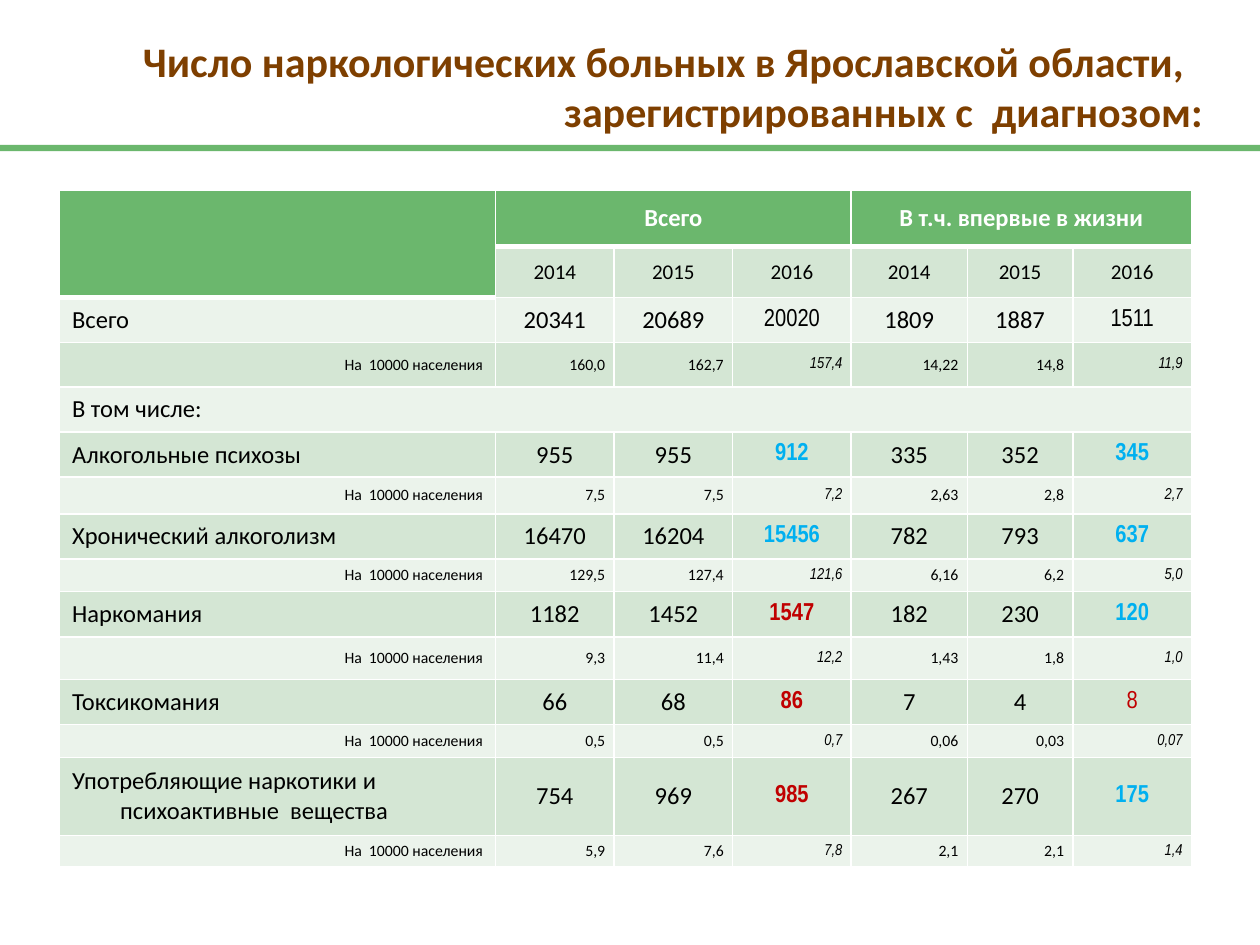
"""Build a slide with a table of registered patients by diagnosis and year."""
from dataclasses import dataclass

from lxml.etree import SubElement
from pptx import Presentation
from pptx.dml.color import RGBColor
from pptx.enum.shapes import MSO_SHAPE as Shape
from pptx.enum.text import MSO_ANCHOR as Anchor, PP_ALIGN as Align
from pptx.oxml.ns import qn
from pptx.util import Cm, Pt

GREEN = RGBColor(0x6B, 0xB7, 0x6D)
BAND_DARK = RGBColor(0xD4, 0xE6, 0xD4)
BAND_LIGHT = RGBColor(0xEB, 0xF3, 0xEB)
BROWN = RGBColor(0x7E, 0x3F, 0x00)
BLUE = RGBColor(0x00, 0xB0, 0xF0)
RED = RGBColor(0xC0, 0x00, 0x00)
BLACK = RGBColor(0, 0, 0)
WHITE = RGBColor(0xFF, 0xFF, 0xFF)

BODY_FONT = "Calibri"
LATEST_FONT = "Arial Narrow"
LATEST_COLS = (3, 6)
HANGING = Cm(0.97)
RATE_LABEL = "На  10000 населения"
COL_WIDTHS = (8.79, 2.39, 2.39, 2.39, 2.34, 2.13, 2.39)
ROW_HEIGHTS = (1.14, 0.91, 0.91, 0.89, 0.91, 0.91, 0.74, 0.91,
               0.66, 0.91, 0.86, 0.91, 0.66, 1.57, 0.41)


@dataclass
class Diagnosis:
    name: str
    counts: str
    rates: str
    total_color: RGBColor = BLUE
    new_color: RGBColor = BLUE
    total_bold: bool = True
    new_bold: bool = True


OVERALL = Diagnosis("Всего", "20341 20689 20020 1809 1887 1511",
                    "160,0 162,7 157,4 14,22 14,8 11,9", BLACK, BLACK, False, False)
DIAGNOSES = (
    Diagnosis("Алкогольные психозы", "955 955 912 335 352 345",
              "7,5 7,5 7,2 2,63 2,8 2,7"),
    Diagnosis("Хронический алкоголизм", "16470 16204 15456 782 793 637",
              "129,5 127,4 121,6 6,16 6,2 5,0"),
    Diagnosis("Наркомания", "1182 1452 1547 182 230 120",
              "9,3 11,4 12,2 1,43 1,8 1,0", RED),
    Diagnosis("Токсикомания", "66 68 86 7 4 8",
              "0,5 0,5 0,7 0,06 0,03 0,07", RED, RED, new_bold=False),
    Diagnosis("Употребляющие наркотики и психоактивные  вещества",
              "754 969 985 267 270 175", "5,9 7,6 7,8 2,1 2,1 1,4", RED),
)


def write(tf, text: str, *, size: float, align=Align.LEFT, font: str = BODY_FONT,
          color: RGBColor = BLACK, bold: bool = False, italic: bool = False,
          hanging: bool = False) -> None:
    p = tf.paragraphs[0]
    p.alignment = align
    if hanging:
        pPr = p._p.get_or_add_pPr()
        pPr.set("marL", str(HANGING))
        pPr.set("indent", str(-HANGING))
    for i, line in enumerate(text.split("\n")):
        if i:
            p.add_line_break()
        r = p.add_run()
        r.text = line
        r.font.name = font
        r.font.size = Pt(size)
        r.font.bold = bold
        r.font.italic = italic
        r.font.color.rgb = color


def style_cell(cell, fill: RGBColor, bottom: float) -> None:
    tcPr = cell._tc.get_or_add_tcPr()
    for side, width in (("L", 1), ("R", 1), ("T", 1), ("B", bottom)):
        ln = SubElement(tcPr, qn(f"a:ln{side}"), w=str(Pt(width)))
        solid = SubElement(ln, qn("a:solidFill"))
        SubElement(solid, qn("a:srgbClr"), val=str(WHITE))
    cell.fill.solid()
    cell.fill.fore_color.rgb = fill
    cell.vertical_anchor = Anchor.MIDDLE


def tighten(cell) -> None:
    cell.margin_left = cell.margin_right = Cm(0.18)
    cell.margin_top = cell.margin_bottom = 0


def fill_header(tbl) -> None:
    tbl.cell(0, 0).merge(tbl.cell(1, 0))
    for col, text in ((1, "Всего"), (4, "В т.ч. впервые в жизни")):
        tbl.cell(0, col).merge(tbl.cell(0, col + 2))
        write(tbl.cell(0, col).text_frame, text, size=14, align=Align.CENTER,
              color=WHITE, bold=True, hanging=True)
        for i in range(3):
            cell = tbl.cell(1, col + i)
            if col == 1:
                tighten(cell)
            write(cell.text_frame, str(2014 + i), size=12, align=Align.CENTER,
                  hanging=col == 4)


def fill_diagnosis(tbl, row: int, d: Diagnosis) -> None:
    write(tbl.cell(row, 0).text_frame, d.name, size=14, hanging=True)
    write(tbl.cell(row + 1, 0).text_frame, RATE_LABEL, size=9, align=Align.RIGHT,
          hanging=True)
    marks = dict(zip(LATEST_COLS, ((d.total_color, d.total_bold),
                                   (d.new_color, d.new_bold))))
    pairs = zip(d.counts.split(), d.rates.split())
    for col, (count, rate) in enumerate(pairs, 1):
        latest = col in LATEST_COLS
        font = LATEST_FONT if latest else BODY_FONT
        color, bold = marks.get(col, (BLACK, False))
        top, low = tbl.cell(row, col), tbl.cell(row + 1, col)
        tighten(top)
        tighten(low)
        write(top.text_frame, count, size=14, align=Align.CENTER, font=font,
              color=color, bold=bold)
        write(low.text_frame, rate, size=9, align=Align.RIGHT, font=font,
              italic=latest)


def add_patient_table(s) -> None:
    frame = s.shapes.add_table(len(ROW_HEIGHTS), len(COL_WIDTHS),
                               Cm(1.2), Cm(3.83), Cm(22.82), Cm(13.77))
    tbl = frame.table
    tbl.first_row = tbl.horz_banding = False
    for column, width in zip(tbl.columns, COL_WIDTHS):
        column.width = Cm(width)
    for i, (row, height) in enumerate(zip(tbl.rows, ROW_HEIGHTS)):
        row.height = Cm(height)
        for j, cell in enumerate(row.cells):
            header = i == 0 or (i == 1 and j == 0)
            band = BAND_DARK if i % 2 else BAND_LIGHT
            style_cell(cell, GREEN if header else band, 3 if header else 1)
    fill_header(tbl)
    fill_diagnosis(tbl, 2, OVERALL)
    tbl.cell(4, 0).merge(tbl.cell(4, 6))
    write(tbl.cell(4, 0).text_frame, "В том числе:", size=14, hanging=True)
    for i, d in enumerate(DIAGNOSES):
        fill_diagnosis(tbl, 5 + 2 * i, d)
    frame.height = Cm(13.77)


def main() -> None:
    prs = Presentation()
    prs.slide_width, prs.slide_height = Cm(25.4), Cm(19.05)
    s = prs.slides.add_slide(prs.slide_layouts[5])
    title = s.shapes.title
    title.left, title.top, title.width, title.height = map(Cm, (0.71, 0.53, 23.8, 2.39))
    title.text_frame.vertical_anchor = Anchor.MIDDLE
    write(title.text_frame, "Число наркологических больных в Ярославской области,  \n"
          "зарегистрированных с  диагнозом:", size=24, align=Align.RIGHT,
          color=BROWN, bold=True)
    add_patient_table(s)
    rule = s.shapes.add_shape(Shape.RECTANGLE, 0, Cm(2.92), prs.slide_width, Cm(0.13))
    rule.shadow.inherit = False
    rule.fill.solid()
    rule.fill.fore_color.rgb = GREEN
    rule.line.fill.background()
    prs.save("out.pptx")


if __name__ == "__main__":
    main()
